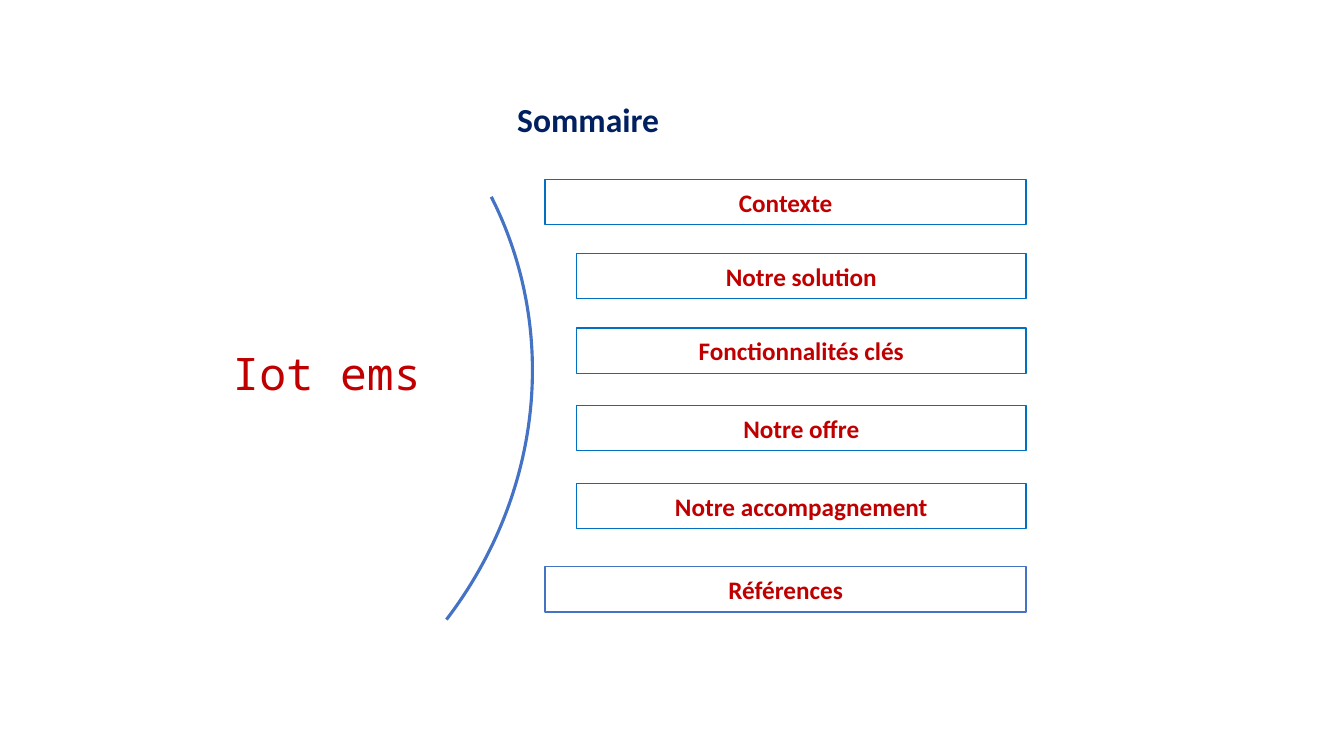
from dataclasses import dataclass

from pptx import Presentation
from pptx.dml.color import RGBColor
from pptx.enum.shapes import MSO_SHAPE as Preset
from pptx.enum.text import MSO_ANCHOR as Anchor, MSO_AUTO_SIZE as AutoSize, PP_ALIGN as Align
from pptx.util import Cm, Pt


@dataclass(frozen=True)
class Theme:
    navy: str = "002060"
    red: str = "C00000"
    blue: str = "0070C0"
    arc_blue: str = "4472C4"
    white: str = "FFFFFF"
    sans: str = "Calibri"
    mono: str = "Noto Sans Mono"
    title_size: float = 24
    entry_size: float = 18
    brand_size: float = 32
    entry_line: float = 1
    arc_line: float = 2.25


THEME = Theme()


@dataclass(frozen=True)
class Entry:
    """One line of the contents; left and top in centimetres."""
    label: str
    left: float
    top: float
    line: str = THEME.blue
    fill: str | None = None


OUTER_LEFT, INNER_LEFT = 13.74, 14.53
ENTRY_RIGHT, ENTRY_HEIGHT = 25.86, 1.14
ENTRIES = (
    Entry("Contexte", OUTER_LEFT, 4.52),
    Entry("Notre solution", INNER_LEFT, 6.39),
    Entry("Fonctionnalités clés", INNER_LEFT, 8.27),
    Entry("Notre offre", INNER_LEFT, 10.22),
    Entry("Notre accompagnement", INNER_LEFT, 12.18),
    Entry("Références", OUTER_LEFT, 14.28, THEME.arc_blue, THEME.white),
)


def write(shape, text: str, *, size: float, color: str, font: str = THEME.sans,
          bold: bool = False, align=Align.LEFT, anchor=Anchor.TOP,
          auto_size=AutoSize.NONE) -> None:
    frame = shape.text_frame
    frame.word_wrap = True
    frame.auto_size = auto_size
    frame.vertical_anchor = anchor
    para = frame.paragraphs[0]
    para.alignment = align
    span = para.add_run()
    span.text = text
    span.font.name = font
    span.font.size = Pt(size)
    span.font.bold = bold
    span.font.color.rgb = RGBColor.from_string(color)


def add_outlined(page, preset, left: float, top: float, width: float, height: float,
                 *, line: str, weight: float, fill: str | None = None):
    shape = page.shapes.add_shape(preset, Cm(left), Cm(top), Cm(width), Cm(height))
    shape.shadow.inherit = False
    if fill:
        shape.fill.solid()
        shape.fill.fore_color.rgb = RGBColor.from_string(fill)
    else:
        shape.fill.background()
    shape.line.color.rgb = RGBColor.from_string(line)
    shape.line.width = Pt(weight)
    return shape


def add_arc(page) -> None:
    arc = add_outlined(page, Preset.ARC, -7.24, -0.89, 20.19, 21.36,
                       line=THEME.arc_blue, weight=THEME.arc_line)
    arc.rotation = 63.1
    arc.adjustments[0] = 162
    arc.adjustments[1] = 198.98


def add_entry(page, entry: Entry) -> None:
    box = add_outlined(page, Preset.RECTANGLE, entry.left, entry.top,
                       ENTRY_RIGHT - entry.left, ENTRY_HEIGHT,
                       line=entry.line, weight=THEME.entry_line, fill=entry.fill)
    write(box, entry.label, size=THEME.entry_size, color=THEME.red, bold=True,
          align=Align.CENTER, anchor=Anchor.MIDDLE)


def add_title(page) -> None:
    title = page.shapes.title
    title.left, title.top, title.width, title.height = Cm(12.78), Cm(2.36), Cm(6.35), Cm(1.27)
    write(title, "Sommaire", size=THEME.title_size, color=THEME.navy, bold=True,
          auto_size=AutoSize.SHAPE_TO_FIT_TEXT)


def add_brand(page) -> None:
    box = page.shapes.add_textbox(Cm(5.61), Cm(8.59), Cm(5.59), Cm(1.63))
    write(box, "Iot ems", size=THEME.brand_size, color=THEME.red, font=THEME.mono,
          auto_size=AutoSize.SHAPE_TO_FIT_TEXT)


def main() -> None:
    deck = Presentation()
    deck.slide_width, deck.slide_height = Cm(33.87), Cm(19.05)
    title_only = deck.slide_layouts.get_by_name("Title Only")
    page = deck.slides.add_slide(title_only)
    add_arc(page)
    add_title(page)
    for entry in ENTRIES:
        add_entry(page, entry)
    add_brand(page)
    deck.save("out.pptx")


if __name__ == "__main__":
    main()
